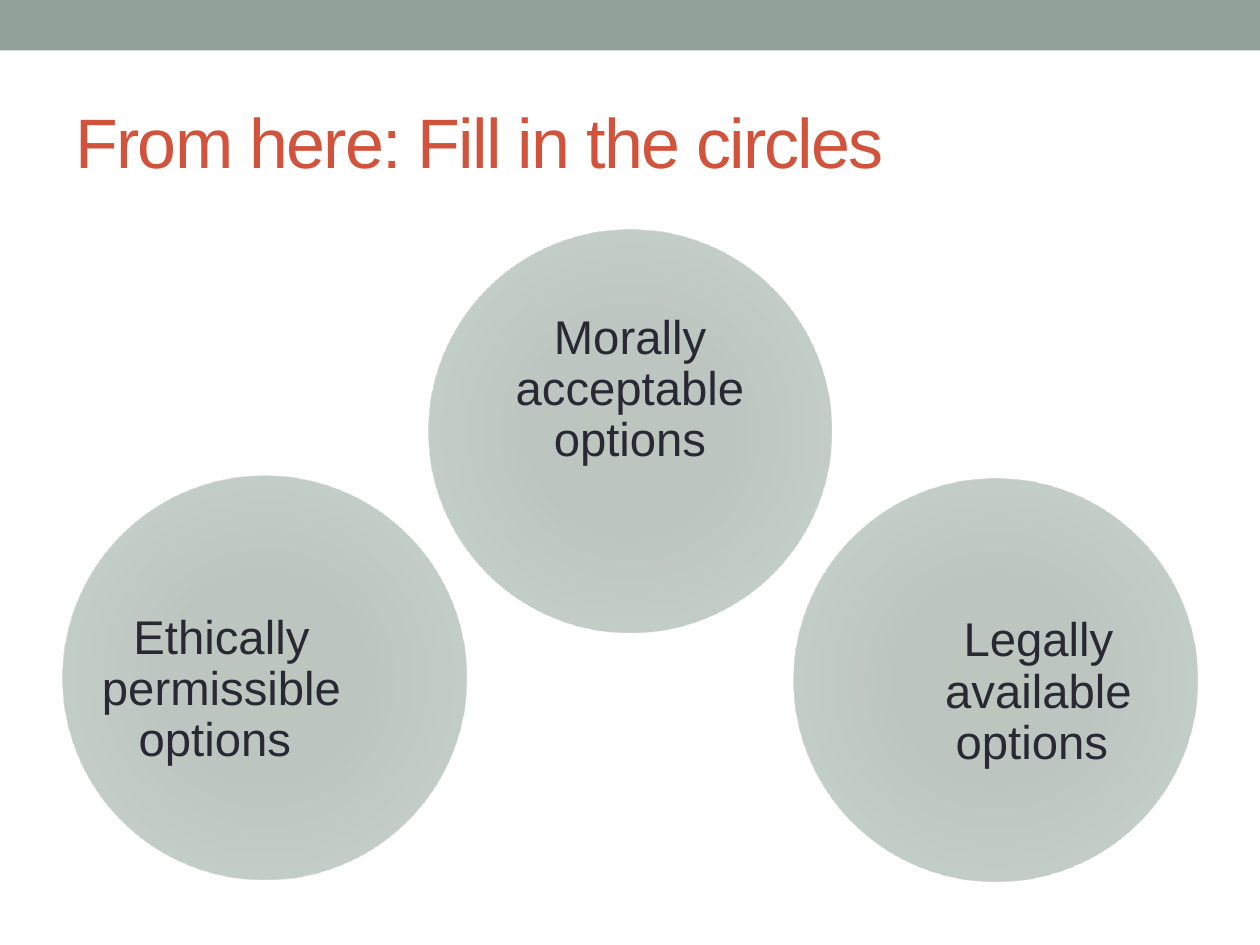
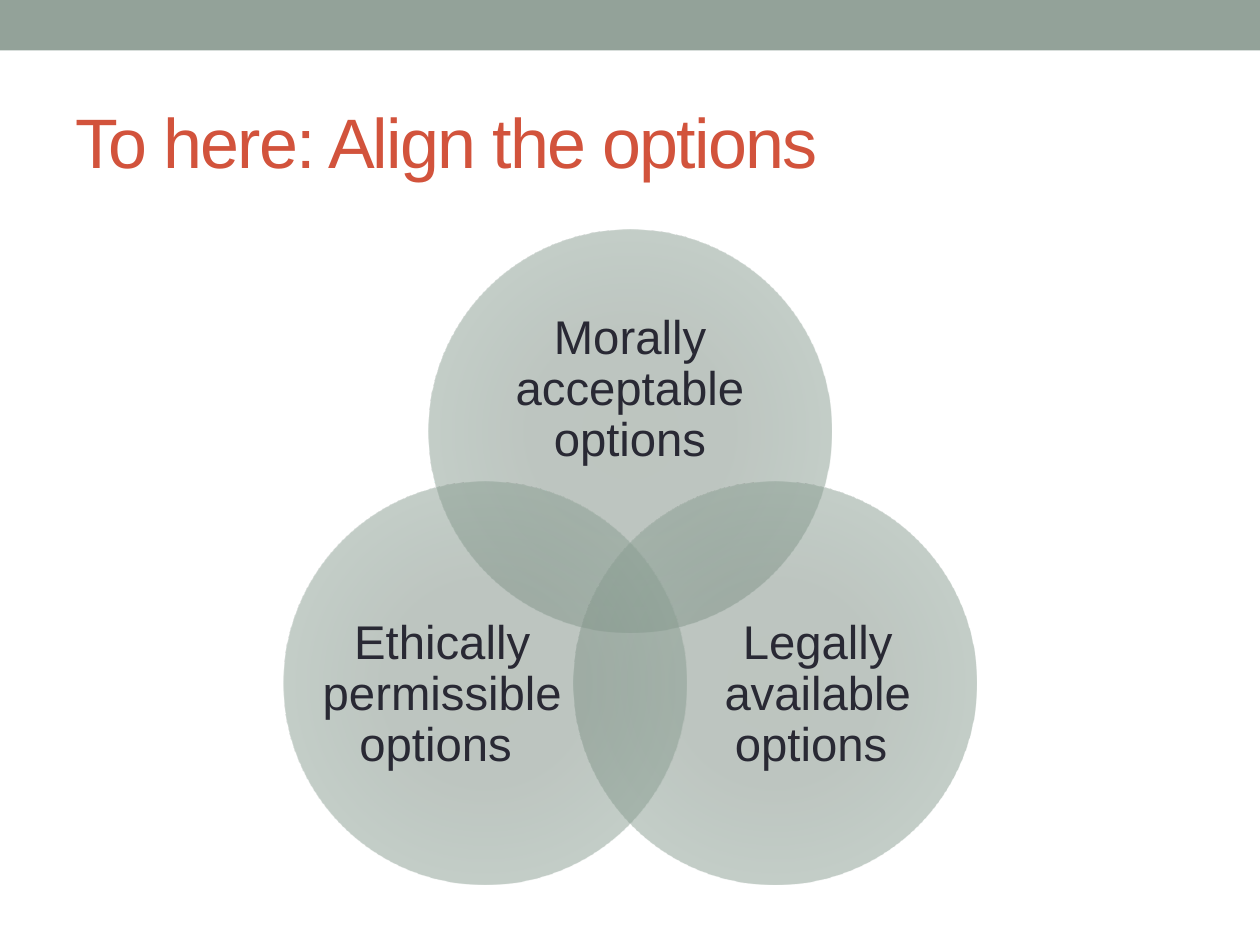
from lxml import etree
from pptx import Presentation
from pptx import util as u
from pptx.dml.color import RGBColor
from pptx.enum import shapes, text
from pptx.oxml.ns import qn

COLOURS = {"band": "93A299", "title": "D2533C", "label": "292934"}
CIRCLE_STOPS = [(0, "7B8E82"), (34, "7B8D83"), (70, "8A9E92"), (100, "93A299")]
CIRCLE_ALPHA = 50
WIDTH, HEIGHT = 25.4, 19.05
DIAMETER = 8.13
LABELS = {
    "Morally acceptable options": (1.08, 1.42, 5.97, 3.66),
    "Legally available options ": (2.49, 2.08, 4.88, 4.47),
    "Ethically permissible options ": (0.76, 2.08, 4.88, 4.47),
}
SLIDES = {
    "From here: Fill in the circles": [(0, 4.62), (7.37, 9.65), (-7.37, 9.6)],
    "To here: Align the options": [(0, 4.62), (2.92, 9.7), (-2.92, 9.7)],
}
FRAME = {"word_wrap": True, "vertical_anchor": text.MSO_ANCHOR.MIDDLE}
LABEL_FRAME = FRAME | {f"margin_{side}": 0 for side in ("left", "top", "right", "bottom")}
TITLE_PARAGRAPH = {"alignment": text.PP_ALIGN.LEFT}
LABEL_PARAGRAPH = {"alignment": text.PP_ALIGN.CENTER, "line_spacing": 0.9}


def write(parent, box, wording, size, colour, frame_format, paragraph_format):
    frame = parent.add_textbox(*map(u.Cm, box)).text_frame
    paragraph = frame.paragraphs[0]
    run = paragraph.add_run()
    run.text = wording
    run.font.color.rgb = RGBColor.from_string(COLOURS[colour])
    for target, values in (
        (frame, frame_format),
        (paragraph, paragraph_format),
        (run.font, {"name": "Arial", "size": u.Pt(size)}),
    ):
        for attribute, value in values.items():
            setattr(target, attribute, value)
    return run


def fill_radially(shape):
    gradient = etree.Element(qn("a:gradFill"), rotWithShape="1")
    stops = etree.SubElement(gradient, qn("a:gsLst"))
    for position, colour in CIRCLE_STOPS:
        stop = etree.SubElement(stops, qn("a:gs"), pos=str(position * 1000))
        tone = etree.SubElement(stop, qn("a:srgbClr"), val=colour)
        etree.SubElement(tone, qn("a:alpha"), val=str(CIRCLE_ALPHA * 1000))
    radial = etree.SubElement(gradient, qn("a:path"), path="circle")
    etree.SubElement(radial, qn("a:fillToRect"), {side: "100000" for side in "ltrb"})
    shape._element.spPr.find(qn("a:prstGeom")).addnext(gradient)


deck = Presentation()
deck.slide_width, deck.slide_height = u.Cm(WIDTH), u.Cm(HEIGHT)

for heading, places in SLIDES.items():
    slide = deck.slides.add_slide(deck.slide_layouts[6])

    band = slide.shapes.add_shape(shapes.MSO_SHAPE.RECTANGLE, 0, 0, u.Cm(WIDTH), u.Cm(1.02))
    band.shadow.inherit = False
    band.fill.solid()
    band.fill.fore_color.rgb = RGBColor.from_string(COLOURS["band"])
    band.line.fill.background()

    title = write(slide.shapes, (1.27, 1.47, 22.86, 2.74), heading, 40, "title",
                  FRAME, TITLE_PARAGRAPH)
    title.font._element.set("spc", "-100")

    venn = slide.shapes.add_group_shape().shapes
    for (shift, top), (wording, (dx, dy, width, height)) in zip(places, LABELS.items()):
        left = (WIDTH - DIAMETER) / 2 + shift
        circle = venn.add_shape(shapes.MSO_SHAPE.OVAL,
                                *map(u.Cm, (left, top, DIAMETER, DIAMETER)))
        circle.shadow.inherit = False
        circle.line.fill.background()
        fill_radially(circle)
        write(venn, (left + dx, top + dy, width, height), wording, 27, "label",
              LABEL_FRAME, LABEL_PARAGRAPH)

deck.save("out.pptx")
